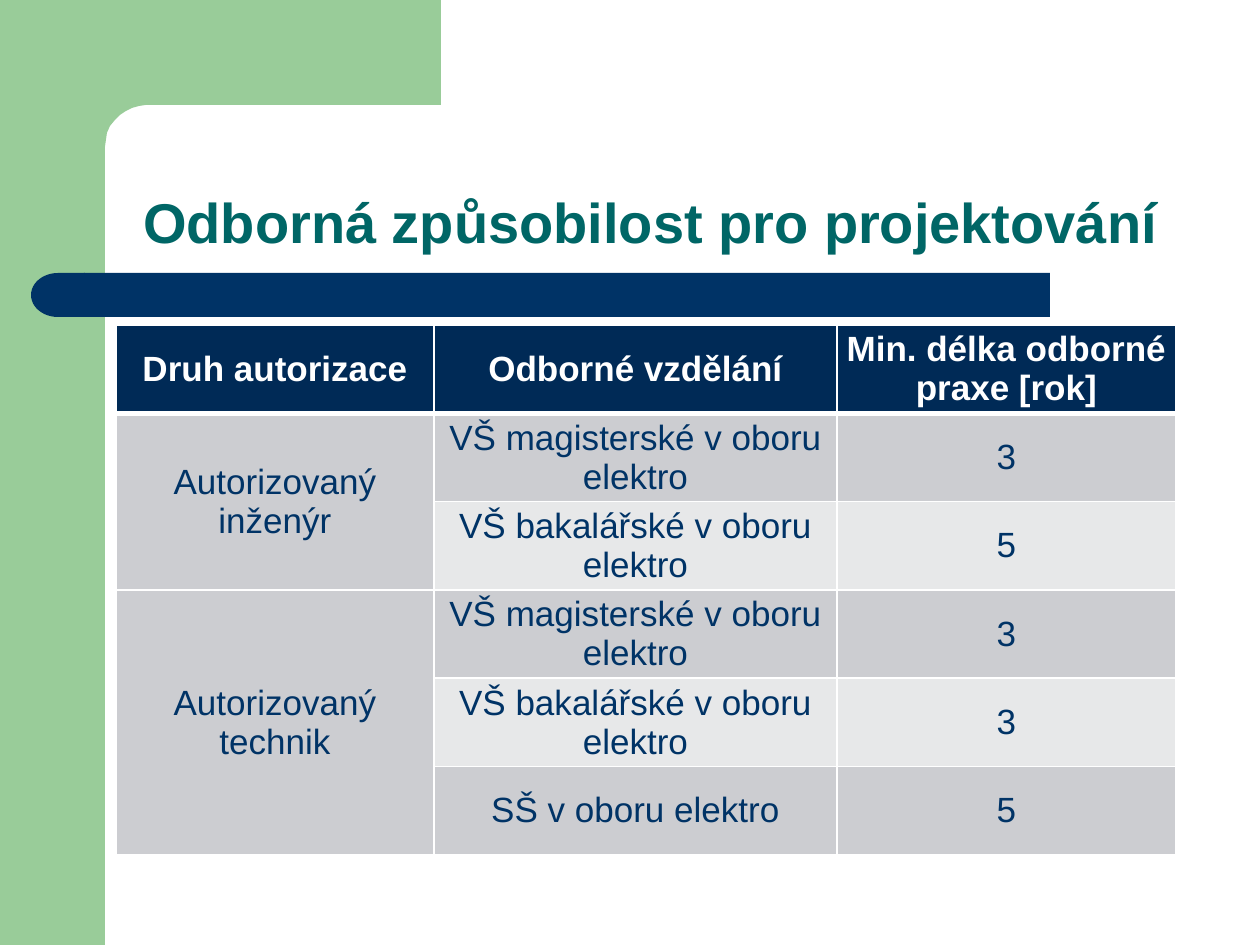
from math import cos, radians, sin

from lxml.etree import SubElement
from pptx import Presentation
from pptx.dml.color import RGBColor
from pptx.enum.shapes import MSO_SHAPE
from pptx.enum.text import MSO_ANCHOR, PP_ALIGN
from pptx.oxml.ns import qn
from pptx.util import Emu, Pt

PX = 914400 / 126
COLORS = {
    "green": "99CC99",
    "navy": "003366",
    "teal": "006666",
    "header": "002A56",
    "dark band": "CCCDD1",
    "light band": "E7E8E9",
    "white": "FFFFFF",
}
HEADERS = ["Druh autorizace", "Odborné vzdělání", "Min. délka odborné praxe [rok]"]
AUTHORIZATIONS = [
    ("Autorizovaný inženýr", [
        ("VŠ magisterské v oboru elektro", "3"),
        ("VŠ bakalářské v oboru elektro", "5"),
    ]),
    ("Autorizovaný technik", [
        ("VŠ magisterské v oboru elektro", "3"),
        ("VŠ bakalářské v oboru elektro", "3"),
        ("SŠ v oboru elektro", "5"),
    ]),
]


def px(*lengths):
    return [Emu(round(length * PX)) for length in lengths]


def color(name):
    return RGBColor.from_string(COLORS[name])


def write(frame, text, *, size, fill, bold=False, spacing=None):
    paragraph = frame.paragraphs[0]
    paragraph.alignment = PP_ALIGN.CENTER
    paragraph.line_spacing = spacing
    run = paragraph.add_run()
    run.text = text
    run.font.name = "Arial"
    run.font.size = Pt(size)
    run.font.bold = bold
    run.font.color.rgb = color(fill)


def set_borders(cell, top=1, bottom=1):
    """Draw white cell borders, with widths in points."""
    properties = cell._tc.get_or_add_tcPr()
    widths = {"a:lnL": 1, "a:lnR": 1, "a:lnT": top, "a:lnB": bottom}
    for position, (side, width) in enumerate(widths.items()):
        line = SubElement(properties, qn(side), w=str(Pt(width)))
        solid = SubElement(line, qn("a:solidFill"))
        SubElement(solid, qn("a:srgbClr"), val=COLORS["white"])
        properties.insert(position, line)


class SlideBuilder:
    def __init__(self, slide):
        self.slide = slide
        self.text_size = 20

    def paint(self, shape, fill):
        shape.shadow.inherit = False
        shape.fill.solid()
        shape.fill.fore_color.rgb = color(fill)
        shape.line.fill.background()
        return shape

    def shape(self, kind, box, fill):
        return self.paint(self.slide.shapes.add_shape(kind, *px(*box)), fill)

    def outline(self, points, fill):
        start, *rest = points
        builder = self.slide.shapes.build_freeform(*start, scale=PX)
        builder.add_line_segments(rest, close=True)
        return self.paint(builder.convert_to_shape(), fill)

    def title(self, text, box):
        title = self.slide.shapes.title
        title.left, title.top, title.width, title.height = px(*box)
        title.text_frame.word_wrap = True
        title.text_frame.vertical_anchor = MSO_ANCHOR.BOTTOM
        write(title.text_frame, text, size=32, fill="teal", bold=True, spacing=0.9)

    def cell(self, cell, text, band, header=False):
        cell.fill.solid()
        cell.fill.fore_color.rgb = color(band)
        cell.vertical_anchor = MSO_ANCHOR.MIDDLE
        cell.margin_left, cell.margin_right = px(9, 9)
        cell.margin_top = cell.margin_bottom = 0
        if text:
            write(cell.text_frame, text, size=self.text_size, bold=header,
                  fill="white" if header else "navy")

    def authorization_table(self, box, column_widths):
        row_count = 1 + sum(len(levels) for _, levels in AUTHORIZATIONS)
        table = self.slide.shapes.add_table(
            row_count, len(HEADERS), *px(*box)).table
        for column, width in zip(table.columns, px(*column_widths)):
            column.width = width
        for index, heading in enumerate(HEADERS):
            self.cell(table.cell(0, index), heading, "header", header=True)

        row = 1
        for authorization, levels in AUTHORIZATIONS:
            first = row
            for education, years in levels:
                band = "dark band" if row % 2 else "light band"
                label = authorization if row == first else ""
                self.cell(table.cell(row, 0), label, "dark band")
                self.cell(table.cell(row, 1), education, band)
                self.cell(table.cell(row, 2), years, band)
                row += 1
            table.cell(first, 0).merge(table.cell(row - 1, 0))

        for index in range(row_count):
            for cell in table.rows[index].cells:
                set_borders(cell, top=3 if index == 1 else 1,
                            bottom=3 if index == 0 else 1)


def main():
    presentation = Presentation()
    presentation.slide_width, presentation.slide_height = px(1260, 945)
    slide = presentation.slides.add_slide(presentation.slide_layouts[5])
    builder = SlideBuilder(slide)

    builder.shape(MSO_SHAPE.RECTANGLE, (0, 0, 105, 945), "green")
    rounded_corner = [
        (146 - 41 * sin(radians(angle)), 147 - 42 * cos(radians(angle)))
        for angle in range(0, 91, 10)
    ]
    builder.outline(
        [(441, 0), (441, 105), *rounded_corner, (105, 161), (63, 161), (63, 0)],
        "green")

    builder.shape(MSO_SHAPE.RECTANGLE, (84, 273, 966, 44), "navy")
    bar_end = builder.shape(MSO_SHAPE.FLOWCHART_DELAY, (31, 273, 54, 44), "navy")
    bar_end.element.spPr.find(qn("a:xfrm")).set("flipH", "1")

    builder.title("Odborná způsobilost pro projektování", (105, 105, 1092, 157))
    builder.authorization_table((116, 325, 1060, 530), (318, 403, 339))
    presentation.save("out.pptx")


if __name__ == "__main__":
    main()
